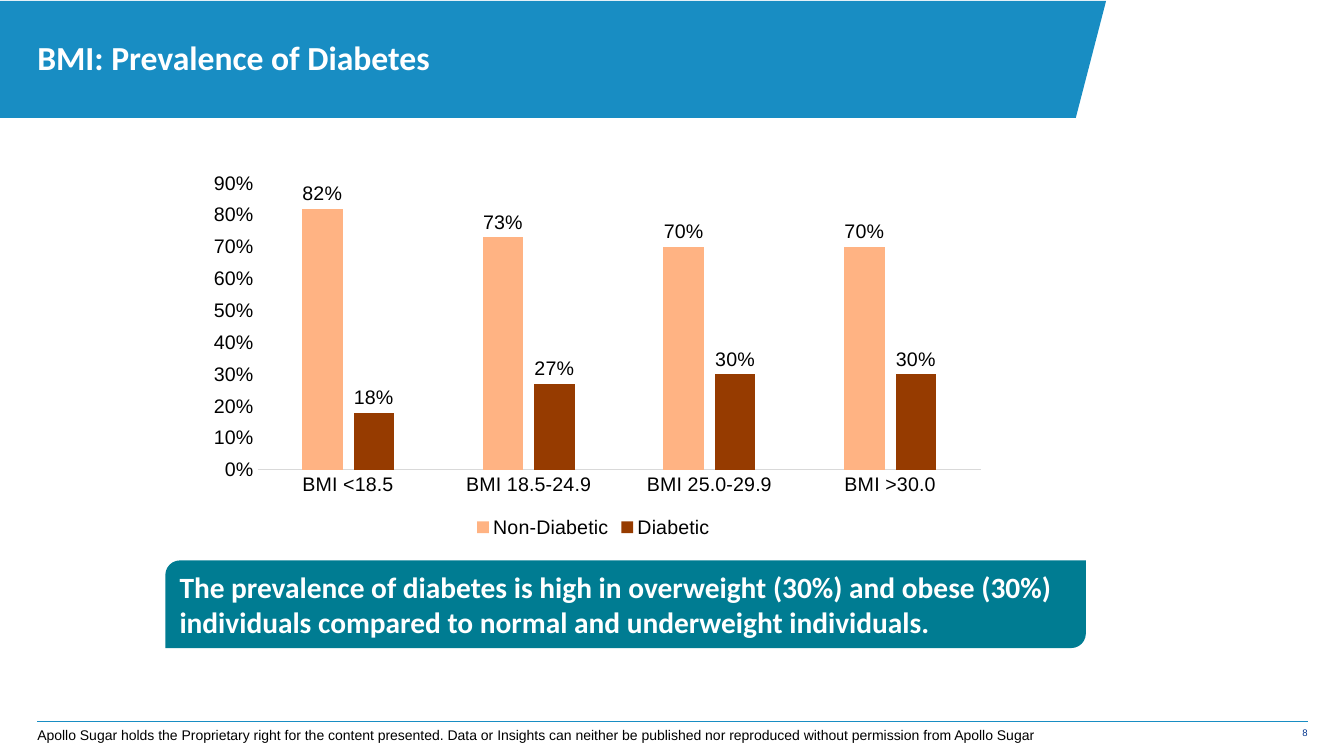
from lxml import etree
from pptx import Presentation
from pptx.chart.data import CategoryChartData
from pptx.dml.color import RGBColor
from pptx.enum.chart import XL_CHART_TYPE as ChartType, XL_LABEL_POSITION as LabelPos
from pptx.enum.chart import XL_LEGEND_POSITION as LegendPos, XL_TICK_MARK as TickMark
from pptx.enum.shapes import MSO_CONNECTOR as Connector, MSO_SHAPE as Shape
from pptx.enum.text import MSO_ANCHOR as Anchor, PP_ALIGN as Align
from pptx.oxml import parse_xml
from pptx.oxml.ns import nsdecls, qn
from pptx.util import Inches, Pt


def color(hex_string):
    return RGBColor.from_string(hex_string)


def write(shape, text, font_name, size, hex_string, bold=False, align=Align.LEFT,
          anchor=Anchor.MIDDLE, insets=(0, 0, 0, 0), wrap=True):
    frame = shape.text_frame
    frame.word_wrap = wrap
    frame.vertical_anchor = anchor
    frame.margin_left, frame.margin_top, frame.margin_right, frame.margin_bottom = map(Inches, insets)
    frame.text = text
    paragraph = frame.paragraphs[0]
    paragraph.alignment = align
    font = paragraph.runs[0].font
    font.name, font.size, font.bold = font_name, Pt(size), bold
    font.color.rgb = color(hex_string)


prs = Presentation()
prs.slide_width, prs.slide_height = Inches(13.33), Inches(7.5)
slide = prs.slides.add_slide(prs.slide_layouts[6])
shapes = slide.shapes

# Footer rule and page number
footer_rule = shapes.add_connector(Connector.STRAIGHT, Inches(0.37), Inches(7.15),
                                   Inches(12.97), Inches(7.15))
footer_rule.line.color.rgb = color("188DC3")
footer_rule.line.width = Pt(0.25)
etree.SubElement(footer_rule._element.spPr, qn("a:effectLst"))

page_number = shapes.add_textbox(Inches(12.29), Inches(7.15), Inches(0.68), Inches(0.31))
write(page_number, "8", "Arial", 6.8, "00338D", align=Align.RIGHT, anchor=Anchor.TOP,
      insets=(0.06, 0.06, 0, 0))

# Header banner and title
outline = shapes.build_freeform(Inches(10.97), Inches(0.01))
outline.add_line_segments([(Inches(x), Inches(y)) for x, y in
                           [(-0.02, 0.01), (-0.02, 1.17), (10.67, 1.17)]], close=True)
banner = outline.convert_to_shape()
banner.shadow.inherit = False
banner.fill.solid()
banner.fill.fore_color.rgb = color("188DC3")
banner.line.fill.background()

title = shapes.add_textbox(Inches(0.37), Inches(0.13), Inches(10.4), Inches(0.87))
write(title, "BMI: Prevalence of Diabetes", "Calibri", 24, "FFFFFF", bold=True)

# Prevalence chart
prevalence = CategoryChartData(number_format="0%")
prevalence.categories = ["BMI <18.5", "BMI 18.5-24.9", "BMI 25.0-29.9", "BMI >30.0"]
prevalence.add_series("Non-Diabetic", [0.82, 0.73, 0.7, 0.7])
prevalence.add_series("Diabetic", [0.18, 0.27, 0.3, 0.3])
chart = shapes.add_chart(ChartType.COLUMN_CLUSTERED, Inches(1.95), Inches(1.44),
                         Inches(7.87), Inches(3.94), prevalence).chart
chart.has_title = False
chart.font.name, chart.font.size = "Arial", Pt(14)
chart.font.color.rgb = color("000000")
chart.has_legend = True
chart.legend.position = LegendPos.BOTTOM
chart.legend.include_in_layout = False

bmi_axis, share_axis = chart.category_axis, chart.value_axis
for axis in (bmi_axis, share_axis):
    axis.major_tick_mark = axis.minor_tick_mark = TickMark.NONE
    axis.has_major_gridlines = False
bmi_axis.format.line.color.rgb = color("D9D9D9")
bmi_axis.format.line.width = Pt(0.75)
share_axis.format.line.fill.background()
share_axis.minimum_scale, share_axis.maximum_scale, share_axis.major_unit = 0, 0.9, 0.1
share_axis.tick_labels.number_format = "0%"
share_axis.tick_labels.number_format_is_linked = False

columns = chart.plots[0]
columns.gap_width, columns.overlap = 219, -27
columns.vary_by_categories = False
columns.has_data_labels = True
columns.data_labels.show_value = True
columns.data_labels.position = LabelPos.OUTSIDE_END
columns.data_labels.number_format = "0%"
columns.data_labels.number_format_is_linked = False
for series, fill in zip(columns.series, ["FFB383", "963B00"]):
    series.format.fill.solid()
    series.format.fill.fore_color.rgb = color(fill)

# Fixed inner plot area
plot_area = chart._chartSpace.chart.plotArea
for old_layout in plot_area.findall(qn("c:layout")):
    plot_area.remove(old_layout)
plot_area.insert(0, parse_xml(
    f'<c:layout {nsdecls("c")}><c:manualLayout><c:layoutTarget val="inner"/>'
    '<c:xMode val="edge"/><c:yMode val="edge"/><c:x val="0.077"/><c:y val="0.096"/>'
    '<c:w val="0.911"/><c:h val="0.722"/></c:manualLayout></c:layout>'))

# Rights notice
notice = shapes.add_textbox(Inches(0.37), Inches(7.21), Inches(10.1), Inches(0.17))
write(notice, "Apollo Sugar holds the Proprietary right for the content presented. Data or Insights "
      "can neither be published nor reproduced without permission from Apollo Sugar",
      "Arial", 10, "000000", wrap=False)

# Key finding
finding = shapes.add_shape(Shape.ROUND_2_DIAG_RECTANGLE, Inches(1.64), Inches(5.56),
                           Inches(9.13), Inches(0.87))
finding.shadow.inherit = False
finding.fill.solid()
finding.fill.fore_color.rgb = color("007C92")
finding.line.fill.background()
write(finding, "The prevalence of diabetes is high in overweight (30%) and obese (30%) individuals "
      "compared to normal and underweight individuals.",
      "Calibri", 21, "FFFFFF", bold=True, insets=(0.1, 0.05, 0.1, 0.05))

prs.save("out.pptx")
